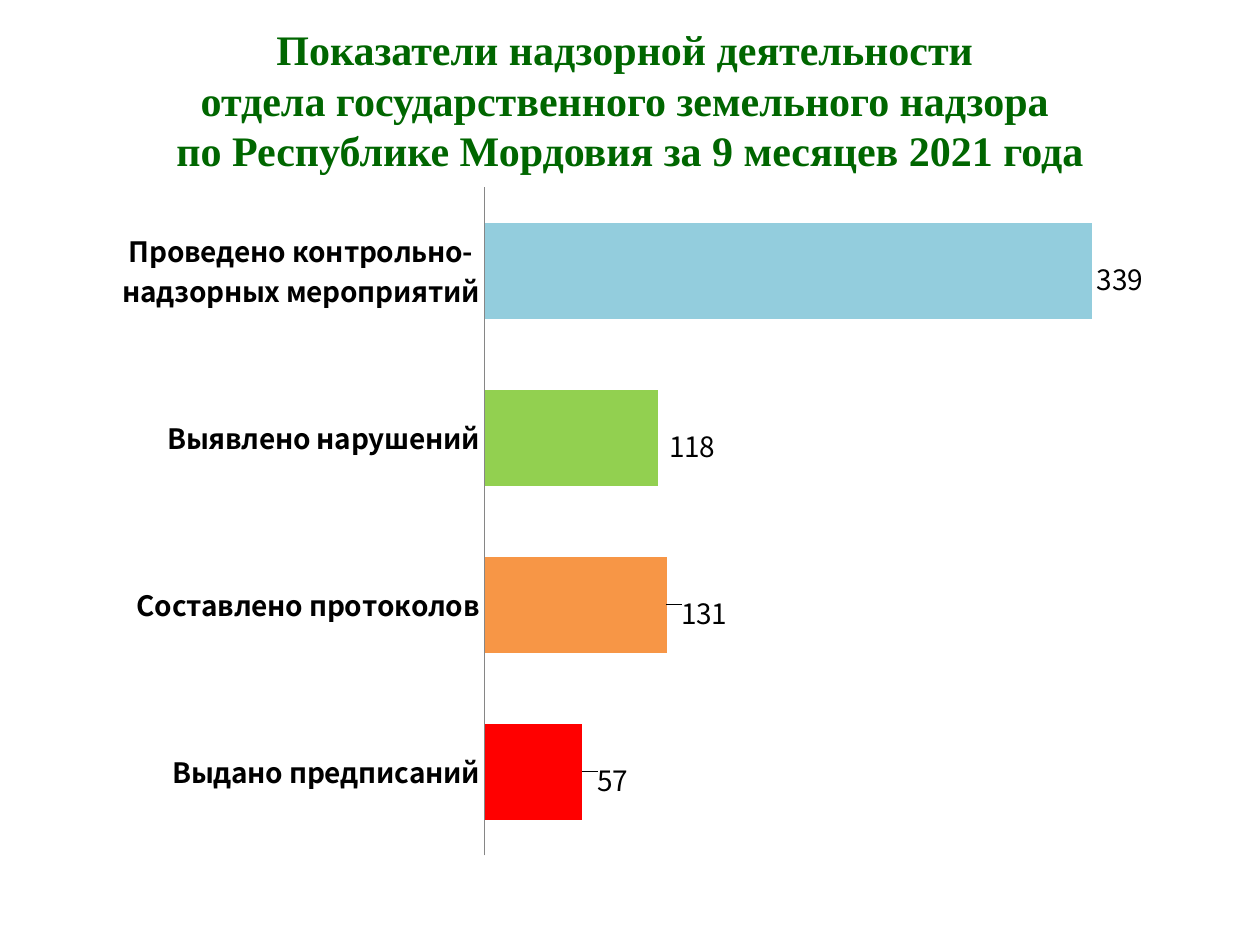
from dataclasses import dataclass

import pptx
import pptx.chart.data
import pptx.dml.color
import pptx.enum.chart
import pptx.enum.text
import pptx.oxml
import pptx.oxml.ns
import pptx.util

Cm = pptx.util.Cm
Pt = pptx.util.Pt
RGB = pptx.dml.color.RGBColor.from_string


@dataclass(frozen=True)
class Theme:
    heading_color: str = "006600"
    text_color: str = "000000"
    axis_color: str = "868686"
    series_color: str = "4F81BD"
    heading_font: str = "Times New Roman"
    chart_font: str = "Noto Sans CJK KR"
    heading_size: int = 24
    chart_size: int = 18
    label_size: int = 16


THEME = Theme()

HEADING = (
    "Показатели надзорной деятельности \v"
    "отдела государственного земельного надзора \v"
    "по Республике Мордовия за 9 месяцев 2021 года"
)

INDICATORS = [
    ("Проведено контрольно-надзорных мероприятий", 287, "339", "93CDDD", 0),
    ("Выявлено нарушений", 82, "118", "92D050", 0.5),
    ("Составлено протоколов", 86, "131", "F79646", 0.8),
    ("Выдано предписаний", 46, "57", "FF0000", 0.9),
]

NO_LEADER_LINES = (
    f'<c:extLst {pptx.oxml.ns.nsdecls("c")}>'
    '<c:ext uri="{CE6537A1-D6FC-4f65-9D91-7224C49458BB}" '
    'xmlns:c15="http://schemas.microsoft.com/office/drawing/2012/chart">'
    '<c15:showLeaderLines val="0"/></c:ext></c:extLst>'
)


def apply_format(target, values):
    for name, value in values.items():
        setattr(target, name, value)


def apply_font(font, name, size, color, bold):
    apply_format(font, {"name": name, "size": Pt(size), "bold": bold})
    font.color.rgb = RGB(color)


def set_layout(parent, index, percents, modes=""):
    for default in parent.xpath("./c:layout"):
        parent.remove(default)
    offsets = "".join(
        f'<c:{tag} val="{percent / 100:.3f}"/>'
        for tag, percent in percents.items()
    )
    parent.insert(index, pptx.oxml.parse_xml(
        f'<c:layout {pptx.oxml.ns.nsdecls("c")}>'
        f"<c:manualLayout>{modes}{offsets}</c:manualLayout></c:layout>"
    ))


def add_heading(slide, left, top, width, height):
    frame = slide.shapes.add_textbox(left, top, width, height).text_frame
    apply_format(frame, {
        "word_wrap": True,
        "vertical_anchor": pptx.enum.text.MSO_ANCHOR.MIDDLE,
    })
    paragraph = frame.paragraphs[0]
    paragraph.text = HEADING
    paragraph.alignment = pptx.enum.text.PP_ALIGN.CENTER
    for run in paragraph.runs:
        apply_font(run.font, THEME.heading_font, THEME.heading_size,
                   THEME.heading_color, True)


def format_axes(chart):
    categories = chart.category_axis
    no_tick = pptx.enum.chart.XL_TICK_MARK.NONE
    apply_format(categories, {
        "reverse_order": True,
        "major_tick_mark": no_tick,
        "minor_tick_mark": no_tick,
        "has_major_gridlines": False,
    })
    categories.format.line.color.rgb = RGB(THEME.axis_color)
    categories.format.line.width = Pt(0.75)
    apply_font(categories.tick_labels.font, THEME.chart_font,
               THEME.label_size, THEME.text_color, True)
    apply_format(chart.value_axis, {
        "visible": False,
        "has_major_gridlines": False,
        "minimum_scale": 0,
        "maximum_scale": 350,
    })


def paint(fill, color):
    fill.solid()
    fill.fore_color.rgb = RGB(color)


def format_bar(point, count, color):
    paint(point.format.fill, color)
    label = point.data_label
    run = label.text_frame.paragraphs[0].add_run()
    run.text = count
    apply_font(run.font, THEME.chart_font, THEME.label_size,
               THEME.text_color, False)
    label.position = pptx.enum.chart.XL_LABEL_POSITION.OUTSIDE_END


def format_series(chart):
    series = chart.plots[0].series[0]
    paint(series.format.fill, THEME.series_color)
    series.data_labels.show_value = True
    apply_font(series.data_labels.font, THEME.chart_font, THEME.label_size,
               THEME.text_color, True)
    for index, (_, _, count, color, _) in enumerate(INDICATORS):
        format_bar(series.points[index], count, color)
    labels = chart.element.xpath(".//c:dLbl")
    for label, (*_, shift) in zip(labels, INDICATORS):
        set_layout(label, 1, {"x": shift, "y": 1.1})
    all_labels = chart.element.xpath(".//c:ser/c:dLbls")[0]
    for default in all_labels.xpath("./c:showLeaderLines"):
        all_labels.remove(default)
    all_labels.append(pptx.oxml.parse_xml(NO_LEADER_LINES))


def add_indicator_chart(slide, left, top, width, height):
    data = pptx.chart.data.CategoryChartData(number_format="General")
    data.categories = [indicator[0] for indicator in INDICATORS]
    data.add_series("Series 1", [indicator[1] for indicator in INDICATORS])
    chart = slide.shapes.add_chart(
        pptx.enum.chart.XL_CHART_TYPE.BAR_CLUSTERED,
        left, top, width, height, data,
    ).chart
    apply_format(chart, {"has_legend": False, "has_title": False})
    apply_font(chart.font, THEME.chart_font, THEME.chart_size,
               THEME.text_color, False)
    apply_format(chart.plots[0], {
        "gap_width": 75,
        "vary_by_categories": False,
    })
    format_axes(chart)
    format_series(chart)
    set_layout(
        chart.element.xpath(".//c:plotArea")[0], 0,
        {"x": 37.8, "y": 0.4, "w": 62.2, "h": 92.2},
        '<c:layoutTarget val="inner"/>'
        '<c:xMode val="edge"/><c:yMode val="edge"/>',
    )


def main():
    deck = pptx.Presentation()
    apply_format(deck, {"slide_width": Cm(25.4), "slide_height": Cm(19.05)})
    slide = deck.slides.add_slide(deck.slide_layouts[6])
    add_heading(slide, Cm(0), Cm(0.52), Cm(25.4), Cm(2.97))
    add_indicator_chart(slide, Cm(0.7), Cm(3.72), Cm(24), Cm(14.61))
    deck.save("out.pptx")


if __name__ == "__main__":
    main()
